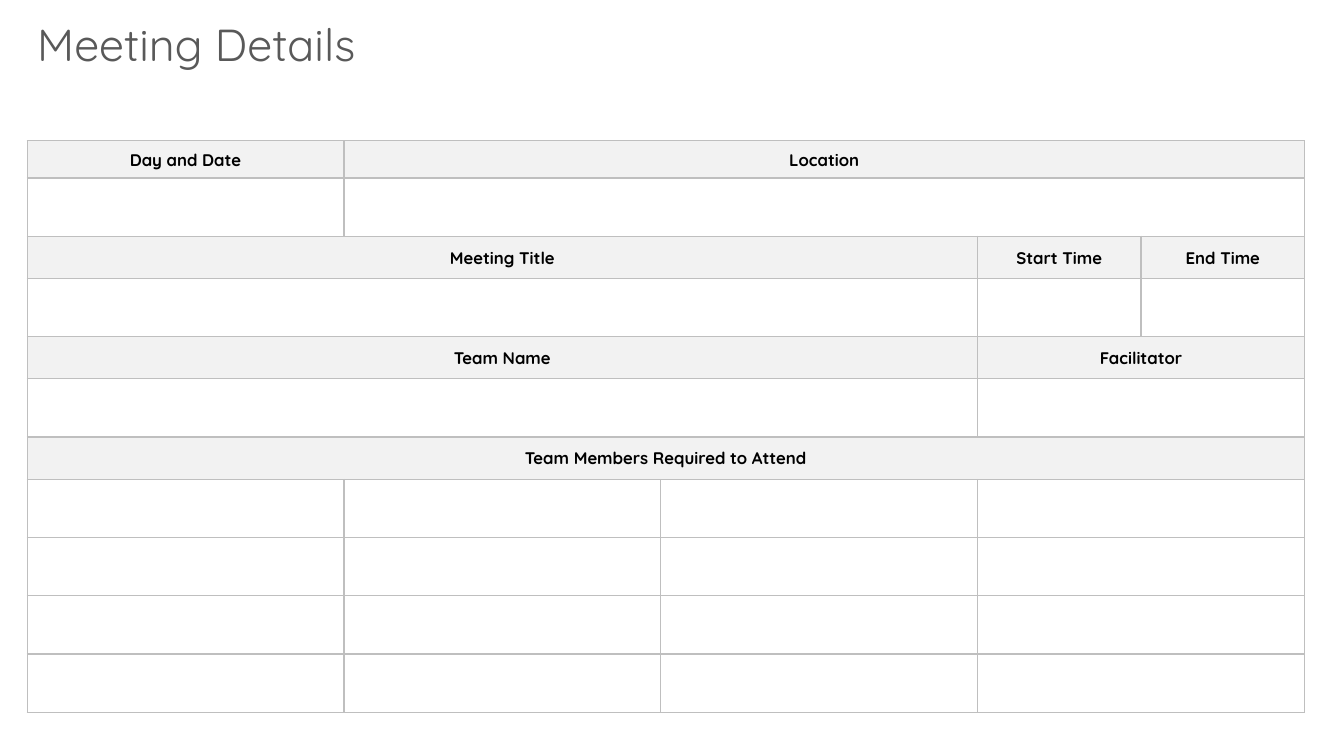
from lxml import etree
from pptx import Presentation
from pptx.dml.color import RGBColor
from pptx.enum import text
from pptx.oxml import ns
from pptx.util import Pt

COLORS = {"title": "595959", "label": "000000", "header": "F2F2F2", "blank": "FFFFFF", "border": "BFBFBF"}
FONT = "Quicksand"
HEADER_HEIGHT, BLANK_HEIGHT = 30.2, 41.6
COLUMN_WIDTHS = [226.3] * 3 + [116.8] * 2
MEMBER_ROWS = 4

SECTIONS = [
    [("Day and Date", 1), ("Location", 4)],
    [("Meeting Title", 3), ("Start Time", 1), ("End Time", 1)],
    [("Team Name", 3), ("Facilitator", 2)],
]


def style_font(font, size, color, bold):
    font.name = FONT
    font.size = Pt(size)
    font.bold = bold
    font.color.rgb = RGBColor.from_string(COLORS[color])


def add_borders(cell):
    properties = cell._tc.get_or_add_tcPr()
    for index, side in enumerate(("lnL", "lnR", "lnT", "lnB")):
        line = etree.Element(ns.qn(f"a:{side}"), w=str(Pt(1)))
        fill = etree.SubElement(line, ns.qn("a:solidFill"))
        etree.SubElement(fill, ns.qn("a:srgbClr"), val=COLORS["border"])
        properties.insert(index, line)


presentation = Presentation()
presentation.slide_width = Pt(960)
presentation.slide_height = Pt(540)
slide = presentation.slides.add_slide(presentation.slide_layouts[5])

title = slide.shapes.title
title.left, title.top, title.width, title.height = Pt(19.4), Pt(8.6), Pt(866), Pt(46)
title.text_frame.text = "Meeting Details"
title.text_frame.vertical_anchor = text.MSO_ANCHOR.TOP
title_paragraph = title.text_frame.paragraphs[0]
title_paragraph.alignment = text.PP_ALIGN.LEFT
style_font(title_paragraph.font, 32, "title", False)

rows = []
for section in SECTIONS:
    rows.append(section)
    rows.append([("", span) for label, span in section])
rows.append([("Team Members Required to Attend", 5)])
rows += [[("", span) for span in (1, 1, 1, 2)]] * MEMBER_ROWS

heights = [HEADER_HEIGHT if row[0][0] else BLANK_HEIGHT for row in rows]
heights[0] = 26.6

table = slide.shapes.add_table(
    len(rows), len(COLUMN_WIDTHS), Pt(19.4), Pt(100.5), Pt(sum(COLUMN_WIDTHS)), Pt(sum(heights))
).table
table.horz_banding = False
table.first_row = False
for column, width in zip(table.columns, COLUMN_WIDTHS):
    column.width = Pt(width)
for table_row, height in zip(table.rows, heights):
    table_row.height = Pt(height)

for row_index, row in enumerate(rows):
    column_index = 0
    for label, span in row:
        cell = table.cell(row_index, column_index)
        last_column = column_index + span - 1
        if span > 1:
            cell.merge(table.cell(row_index, last_column))
        for index in range(column_index, last_column + 1):
            part = table.cell(row_index, index)
            part.fill.solid()
            part.fill.fore_color.rgb = RGBColor.from_string(COLORS["header" if label else "blank"])
            add_borders(part)
        if label:
            cell.text = label
            cell.vertical_anchor = text.MSO_ANCHOR.MIDDLE
            cell.margin_left = cell.margin_right = cell.margin_top = Pt(0.7)
            cell.margin_bottom = Pt(0)
            paragraph = cell.text_frame.paragraphs[0]
            paragraph.alignment = text.PP_ALIGN.CENTER
            style_font(paragraph.font, 12, "label", True)
        column_index += span

presentation.save("out.pptx")
